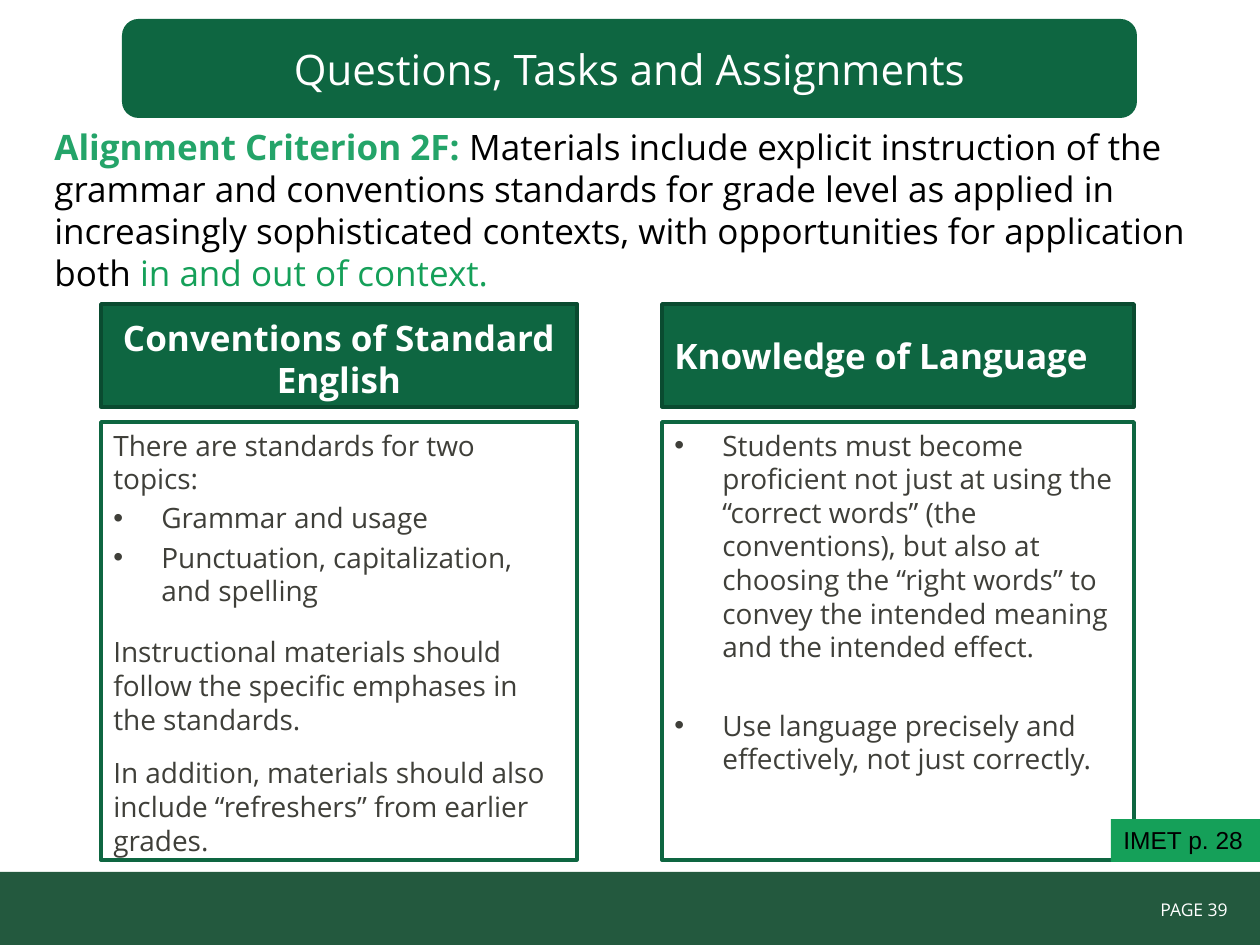
from lxml import etree
from pptx import Presentation
from pptx import util as u
from pptx.dml.color import RGBColor
from pptx.enum import shapes, text
from pptx.oxml.ns import qn

SCALE = 914400 / 126
FONT = "Open Sans"
GREEN, DARK, BRIGHT = "0E6641", "0A4B30", "15A059"
WHITE, BLACK, GRAY = "FFFFFF", "000000", "3F3F39"
RECT = shapes.MSO_SHAPE.RECTANGLE
ROUND = shapes.MSO_SHAPE.ROUNDED_RECTANGLE
LEFT, MID, RIGHT = text.PP_ALIGN.LEFT, text.PP_ALIGN.CENTER, text.PP_ALIGN.RIGHT
TOP, CENTER, BOTTOM = (text.MSO_ANCHOR.TOP, text.MSO_ANCHOR.MIDDLE,
                       text.MSO_ANCHOR.BOTTOM)


def px(n):
    return u.Emu(round(n * SCALE))


def color(code):
    return RGBColor.from_string(code)


def style(run, size, ink, bold=False, face=FONT):
    run.font.name = face
    run.font.size = u.Pt(size)
    run.font.bold = bold
    run.font.color.rgb = color(ink)


def block(slide, area, fill, edge=None, kind=RECT):
    shape = slide.shapes.add_shape(kind, *map(px, area))
    shape.shadow.inherit = False
    shape.fill.solid()
    shape.fill.fore_color.rgb = color(fill)
    if edge:
        shape.line.color.rgb = color(edge)
        shape.line.width = u.Pt(2)
    else:
        shape.line.fill.background()
    return shape


def label(shape, words, size, ink, align=LEFT, anchor=CENTER, **look):
    frame = shape.text_frame
    frame.word_wrap = True
    frame.vertical_anchor = anchor
    frame.text = words
    para = frame.paragraphs[0]
    para.alignment = align
    style(para.runs[0], size, ink, **look)


def bullet(para):
    props = para._p.get_or_add_pPr()
    props.set("marL", str(px(48)))
    props.set("indent", str(px(-48)))
    etree.SubElement(props, qn("a:buFont"), typeface="Arial")
    etree.SubElement(props, qn("a:buChar"), char="•")


def body(shape, items):
    """Fill a panel with (words, bulleted, space before) items."""
    frame = shape.text_frame
    frame.word_wrap = True
    frame.vertical_anchor = TOP
    for i, (words, dot, gap) in enumerate(items):
        para = frame.add_paragraph() if i else frame.paragraphs[0]
        para.text = words
        para.alignment = LEFT
        if i:
            para.space_before = u.Pt(gap)
        if dot:
            bullet(para)
        style(para.runs[0], 16, GRAY)


def column(slide, left, width, head, align, anchor, items):
    top = block(slide, (left, 304, width, 103), GREEN, DARK)
    label(top, head, 20, WHITE, align, anchor, bold=True)
    body(block(slide, (left, 422, width, 438), WHITE, GREEN), items)


def intro(slide):
    frame = slide.shapes.add_textbox(*map(px, (42, 118, 1176, 183))).text_frame
    frame.word_wrap = True
    frame.vertical_anchor = CENTER
    parts = [
        ("Alignment Criterion 2F:", "24A469", True),
        (" Materials include explicit instruction of the grammar and "
         "conventions standards for grade level as applied in increasingly "
         "sophisticated contexts, with opportunities for application both ",
         BLACK, False),
        ("in and out of context.", BRIGHT, False),
    ]
    for words, ink, bold in parts:
        run = frame.paragraphs[0].add_run()
        run.text = words
        style(run, 20, ink, bold)


def main():
    deck = Presentation()
    deck.slide_width, deck.slide_height = px(1260), px(945)
    slide = deck.slides.add_slide(deck.slide_layouts[6])

    block(slide, (0, 872, 1260, 73), "23593E")
    page = slide.shapes.add_textbox(*map(px, (1043, 893, 197, 34)))
    label(page, "PAGE 39", 10, WHITE, RIGHT, TOP)
    intro(slide)

    column(slide, 101, 476, "Conventions of Standard English", MID, BOTTOM, [
        ("There are standards for two topics:", False, 0),
        ("Grammar and usage", True, 3.2),
        ("Punctuation, capitalization, and spelling", True, 3.2),
        ("Instructional materials should follow the specific emphases in "
         "the standards.", False, 15.8),
        ("In addition, materials should also include “refreshers” from "
         "earlier grades.", False, 11.6),
    ])
    column(slide, 662, 472, "Knowledge of Language", LEFT, CENTER, [
        ("Students must become proficient not just at using the “correct "
         "words” (the conventions), but also at choosing the “right words” "
         "to convey the intended meaning and the intended effect.", True, 0),
        ("Use language precisely and effectively, not just correctly.",
         True, 25.6),
    ])

    tag = block(slide, (1111, 819, 149, 43), BRIGHT)
    label(tag, "IMET p. 28", 14, BLACK, anchor=TOP, face="Arial")
    title = block(slide, (122, 19, 1015, 99), GREEN, kind=ROUND)
    label(title, "Questions, Tasks and Assignments", 24, WHITE, MID)
    deck.save("out.pptx")


if __name__ == "__main__":
    main()
